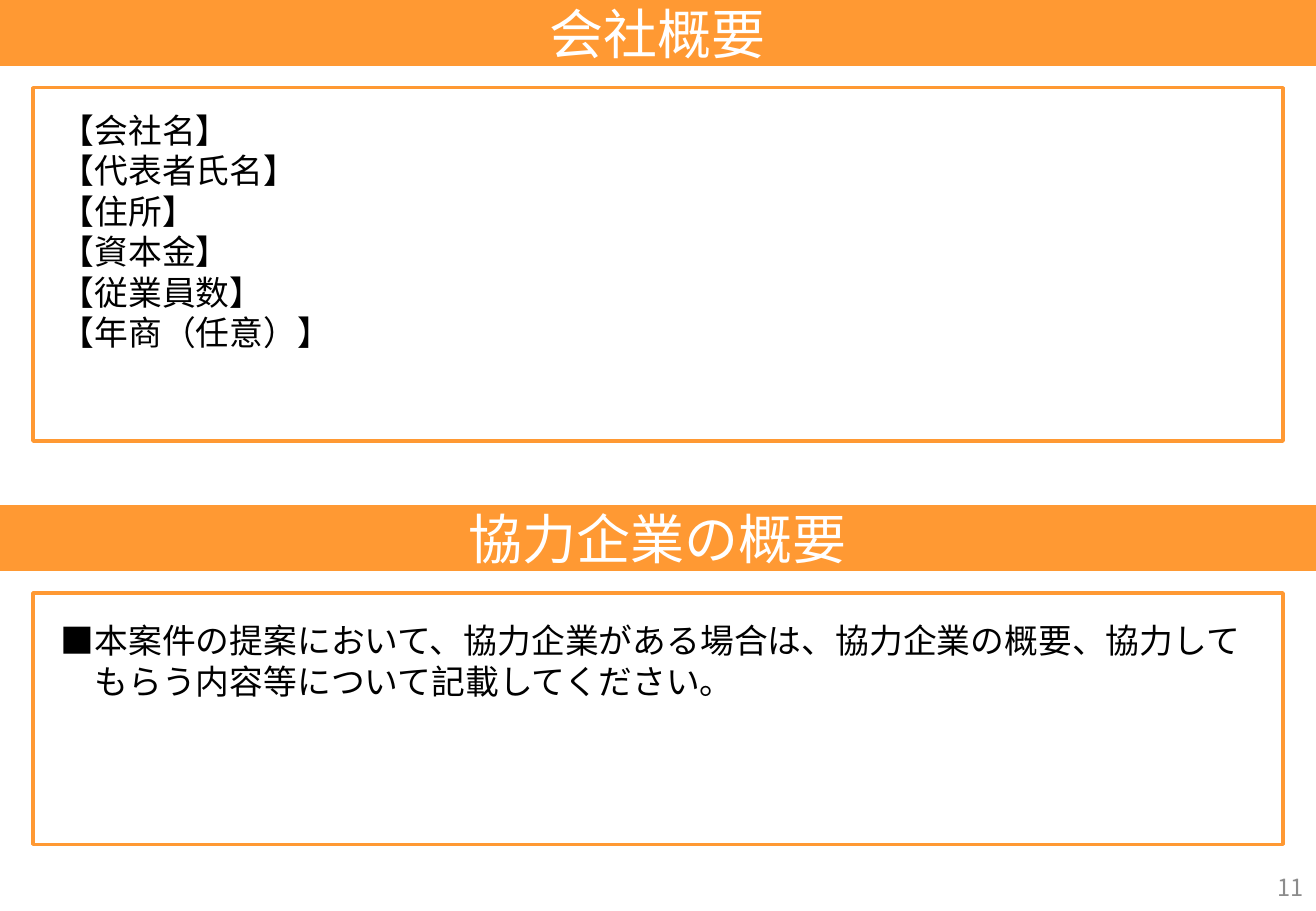
from dataclasses import dataclass

from lxml import etree
from pptx import Presentation
from pptx import util as u
from pptx.dml.color import RGBColor
from pptx.enum import shapes, text
from pptx.oxml import ns


@dataclass(frozen=True)
class Theme:
    """Colours, type sizes and font of the deck."""
    orange: str = "FF9933"
    white: str = "FFFFFF"
    black: str = "000000"
    grey: str = "8C8C8C"
    head: int = 32
    body: int = 20
    note: int = 14
    font: str = "Noto Sans CJK JP"


def write(shape, lines, font, size, color, align="LEFT", anchor="TOP",
          pitch=None, hang=0, inset=0, wrap=True):
    """Write lines as paragraphs of a shape in one format."""
    frame = shape.text_frame
    frame.auto_size = text.MSO_AUTO_SIZE.NONE
    frame.word_wrap = wrap
    frame.vertical_anchor = text.MSO_ANCHOR[anchor]
    frame.margin_left = frame.margin_right = u.Pt(inset)
    frame.margin_top = frame.margin_bottom = u.Pt(inset / 2)
    frame.text = "\n".join(lines)
    for para in frame.paragraphs:
        para.alignment = text.PP_ALIGN[align]
        if pitch:
            para.line_spacing = u.Pt(pitch)
        if hang:
            props = para._p.get_or_add_pPr()
            props.set("marL", str(u.Pt(hang)))
            props.set("indent", str(-u.Pt(hang)))
        for run in para.runs:
            run.font.name = font
            run.font.size = u.Pt(size)
            run.font.color.rgb = RGBColor.from_string(color)
            east = etree.SubElement(run._r.get_or_add_rPr(), ns.qn("a:ea"))
            east.set("typeface", font)


class Page:
    """Holds the theme and the current slide."""

    def __init__(self, theme, width, height):
        """Start a deck with one title-only slide."""
        self.theme, self.width, self.height = theme, width, height
        self.deck = Presentation()
        self.deck.slide_width = u.Pt(width)
        self.deck.slide_height = u.Pt(height)
        self.slide = self.deck.slides.add_slide(self.deck.slide_layouts[5])

    def rect(self, *box):
        """Add a plain rectangle."""
        shape = self.slide.shapes.add_shape(
            shapes.MSO_SHAPE.RECTANGLE, *map(u.Pt, box))
        shape.shadow.inherit = False
        return shape

    def band(self, shape, label):
        """Format a shape as an orange heading band."""
        look = self.theme
        shape.fill.solid()
        shape.fill.fore_color.rgb = RGBColor.from_string(look.orange)
        shape.line.fill.background()
        write(shape, [label], look.font, look.head, look.white,
              align="CENTER", anchor="MIDDLE")

    def title(self, label, high):
        """Place the slide title as the top band."""
        shape = self.slide.shapes.title
        shape.left, shape.top = u.Pt(0), u.Pt(0)
        shape.width, shape.height = u.Pt(self.width), u.Pt(high)
        self.band(shape, label)

    def head(self, label, top, high):
        """Add a further heading band."""
        self.band(self.rect(0, top, self.width, high), label)

    def frame(self, top, high, side=19.5):
        """Add an outlined box with equal side margins."""
        shape = self.rect(side, top, self.width - 2 * side, high)
        shape.fill.background()
        shape.line.color.rgb = RGBColor.from_string(self.theme.orange)
        shape.line.width = u.Pt(2)

    def label(self, lines, box, **form):
        """Add a text box in the body style unless told otherwise."""
        look = self.theme
        form = {"size": look.body, "color": look.black, **form}
        shape = self.slide.shapes.add_textbox(*map(u.Pt, box))
        write(shape, lines, look.font, **form)


def main():
    """Build the company outline slide."""
    look = Theme()
    page = Page(look, 780, 540)
    high, pitch, left = 39, 24, 36

    page.title("会社概要", high)
    page.frame(52, 209.5)
    items = ["会社名", "代表者氏名", "住所", "資本金", "従業員数", "年商（任意）"]
    page.label([f"【{item}】" for item in items],
               (left, 65, 162, pitch * len(items)), pitch=pitch, wrap=False)

    page.head("協力企業の概要", 299.5, high)
    page.frame(351.5, 149)
    page.label(["■本案件の提案において、協力企業がある場合は、協力企業の概要、"
                "協力してもらう内容等について記載してください。"],
               (left, 367.5, 708, 2 * pitch), pitch=pitch, hang=look.body)

    page.label(["11"], (604.5, 511.5, 175.5, 28.5), size=look.note,
               color=look.grey, align="RIGHT", anchor="MIDDLE", inset=7.2)
    page.deck.save("out.pptx")


if __name__ == "__main__":
    main()
